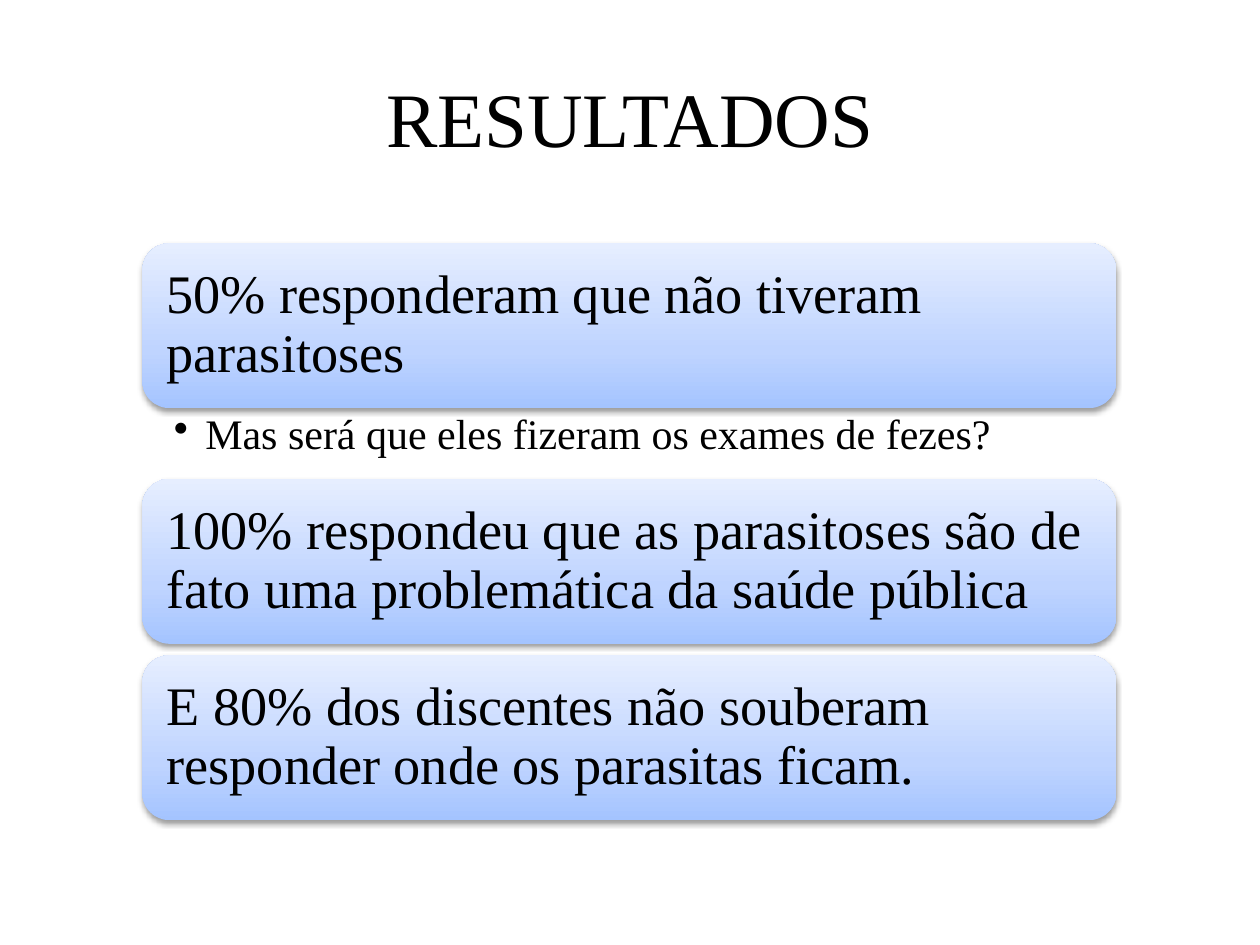
from copy import deepcopy
from lxml.etree import SubElement
from pptx import Presentation
from pptx.dml.color import RGBColor
from pptx.enum.shapes import MSO_SHAPE
from pptx.enum.text import MSO_ANCHOR, PP_ALIGN
from pptx.oxml.ns import qn
from pptx.util import Inches, Pt


def color(code):
    return RGBColor.from_string(code)


def write(shape, text, size, align, anchor, sides, ends):
    frame = shape.text_frame
    frame.word_wrap = True
    frame.vertical_anchor = anchor
    frame.margin_left = frame.margin_right = Inches(sides)
    frame.margin_top = frame.margin_bottom = Inches(ends)
    para = frame.paragraphs[0]
    para.alignment = align
    run = para.add_run()
    run.text = text
    run.font.size = Pt(size)
    run.font.name = "Times New Roman"
    run.font.color.rgb = color("000000")
    return para


deck = Presentation()
deck.slide_width = Inches(10)
deck.slide_height = Inches(7.5)
slide = deck.slides.add_slide(deck.slide_layouts[6])
shapes = slide.shapes

title = shapes.add_textbox(Inches(0.5), Inches(0.3), Inches(9), Inches(1.25))
write(title, "RESULTADOS", 44, PP_ALIGN.CENTER, MSO_ANCHOR.MIDDLE, 0.1, 0.05)

left, width, height = Inches(1.13), Inches(7.73), Inches(1.31)
cards = [
    (1.93, "50% responderam que não tiveram parasitoses"),
    (3.8, "100% respondeu que as parasitoses são de fato uma problemática da saúde pública"),
    (5.2, "E 80% dos discentes não souberam responder onde os parasitas ficam."),
]
for top, text in cards:
    card = shapes.add_shape(MSO_SHAPE.ROUNDED_RECTANGLE, left, Inches(top), width, height)
    card.line.fill.background()
    card.fill.gradient()
    card.fill.gradient_angle = 90
    stops = card._element.spPr.find(".//" + qn("a:gsLst"))
    stops.insert(1, deepcopy(stops[0]))
    tones = [(0, "A4C4FF"), (0.35, "BFD4FF"), (1, "E6EEFF")]
    for stop, (place, tone) in zip(card.fill.gradient_stops, tones):
        stop.position = place
        stop.color.rgb = color(tone)
    card.shadow.inherit = False
    effects = card._element.spPr.find(qn("a:effectLst"))
    shadow = SubElement(effects, qn("a:outerShdw"), blurRad=str(Pt(3.1)),
                        dist=str(Pt(1.6)), dir="5400000", rotWithShape="0")
    black = SubElement(shadow, qn("a:srgbClr"), val="000000")
    SubElement(black, qn("a:alpha"), val="38000")
    para = write(card, text, 31, PP_ALIGN.LEFT, MSO_ANCHOR.MIDDLE, 0.13, 0.13)
    para.line_spacing = 0.9

note = shapes.add_textbox(left, Inches(3.24), width, Inches(0.56))
para = write(note, "Mas será que eles fizeram os exames de fezes?", 24,
             PP_ALIGN.LEFT, MSO_ANCHOR.TOP, 0.25, 0.04)
para.line_spacing = 0.9
props = para._p.get_or_add_pPr()
props.set("marL", str(Inches(0.25)))
props.set("indent", str(Inches(-0.25)))
SubElement(props, qn("a:buChar"), char="•")

deck.save("out.pptx")
